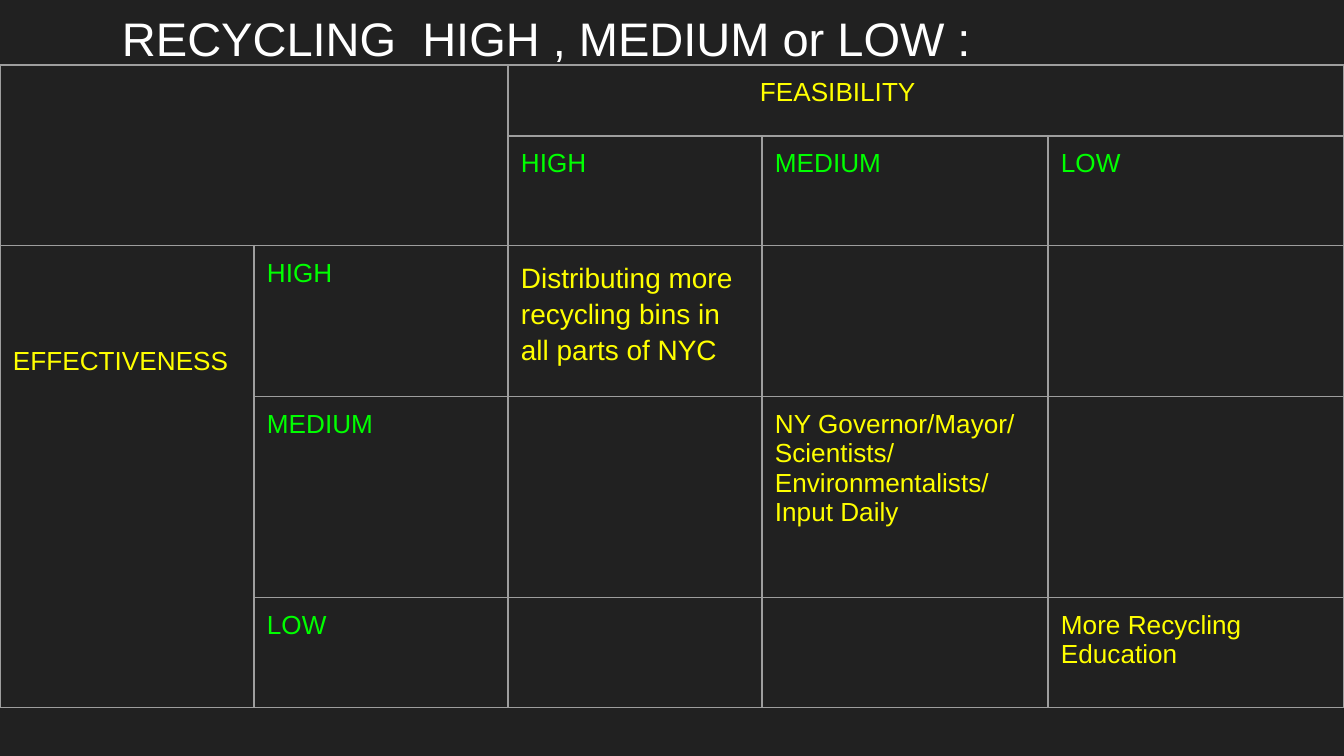
from lxml import etree
from pptx import Presentation
from pptx.dml.color import RGBColor
from pptx.enum.text import MSO_ANCHOR, MSO_AUTO_SIZE
from pptx.oxml.ns import qn
from pptx.util import Pt

PX = 914400 / 134.4  # EMU per px
TOP = MSO_ANCHOR.TOP
NO_AUTOFIT = MSO_AUTO_SIZE.NONE
FONT = "Arial"
INSET = 13
COLORS = {
    "background": "212121",
    "border": "9E9E9E",
    "title": "FFFFFF",
    "text": "FFFF00",
    "level": "00FF00",
}
COL_WIDTHS = [254, 254, 254, 286, 296]
ROW_HEIGHTS = [71, 110, 151, 201, 110]
LEVELS = ["HIGH", "MEDIUM", "LOW"]


def px(n):
    return round(n * PX)


def rgb(name):
    return RGBColor.from_string(COLORS[name])


def add_run(p, text, size, color):
    r = p.add_run()
    r.text = text
    r.font.name = FONT
    r.font.size = Pt(size)
    r.font.color.rgb = rgb(color)


def add_title(slide, text):
    s = slide.shapes.add_textbox(px(109), px(-7), px(1030), px(28))
    tf = s.text_frame
    tf.word_wrap = True
    tf.auto_size = NO_AUTOFIT
    tf.vertical_anchor = TOP
    tf.margin_left = tf.margin_right = tf.margin_bottom = px(INSET)
    tf.margin_top = px(18)
    add_run(tf.paragraphs[0], text, 25.2, "title")


def style_cell(cell):
    cell.margin_left = cell.margin_right = px(INSET)
    cell.margin_top = cell.margin_bottom = px(INSET)
    cell.vertical_anchor = TOP
    tc_pr = cell._tc.get_or_add_tcPr()
    for side in ("a:lnL", "a:lnR", "a:lnT", "a:lnB"):
        ln = etree.SubElement(tc_pr, qn(side), w=str(Pt(0.75)))
        fill = etree.SubElement(ln, qn("a:solidFill"))
        etree.SubElement(fill, qn("a:srgbClr"), val=COLORS["border"])
    cell.fill.background()
    cell.text_frame.paragraphs[0].font.size = Pt(14)


def add_grid(slide):
    frame = slide.shapes.add_table(
        len(ROW_HEIGHTS), len(COL_WIDTHS), 0, px(65),
        px(sum(COL_WIDTHS)), px(sum(ROW_HEIGHTS)))
    table = frame.table
    table.first_row = table.horz_banding = False
    for col, width in zip(table.columns, COL_WIDTHS):
        col.width = px(width)
    for row, height in zip(table.rows, ROW_HEIGHTS):
        row.height = px(height)
    for cell in table.iter_cells():
        style_cell(cell)
    table.cell(0, 0).merge(table.cell(1, 1))
    table.cell(0, 2).merge(table.cell(0, 4))
    table.cell(2, 0).merge(table.cell(4, 0))
    return table


def fill_cell(cell, lines, color="text", size=14):
    tf = cell.text_frame
    for i, line in enumerate(lines):
        p = tf.add_paragraph() if i else tf.paragraphs[0]
        add_run(p, line, size, color)
    return tf.paragraphs[0]


def main():
    prs = Presentation()
    prs.slide_width, prs.slide_height = px(1344), px(756)
    slide = prs.slides.add_slide(prs.slide_layouts[6])
    slide.background.fill.solid()
    slide.background.fill.fore_color.rgb = rgb("background")

    table = add_grid(slide)

    # Axis names, shifted within their merged cells
    p = fill_cell(table.cell(0, 2), ["FEASIBILITY"])
    p._p.get_or_add_pPr().set("marL", str(px(239)))
    fill_cell(table.cell(2, 0), ["EFFECTIVENESS"])
    table.cell(2, 0).margin_top = px(INSET + 88)

    # The same levels along both axes
    for i, level in enumerate(LEVELS, start=2):
        fill_cell(table.cell(1, i), [level], "level")
        fill_cell(table.cell(i, 1), [level], "level")

    # Rated ideas on the diagonal
    p = fill_cell(table.cell(2, 2),
                  ["Distributing more recycling bins in all parts of NYC"], size=15)
    p.line_spacing = 1.15
    p.space_after = Pt(12)
    fill_cell(table.cell(3, 3), ["NY Governor/Mayor/", "Scientists/",
                                 "Environmentalists/ Input Daily"])
    fill_cell(table.cell(4, 4), ["More Recycling Education"])

    add_title(slide, "RECYCLING  HIGH , MEDIUM or LOW :")
    prs.save("out.pptx")


if __name__ == "__main__":
    main()
